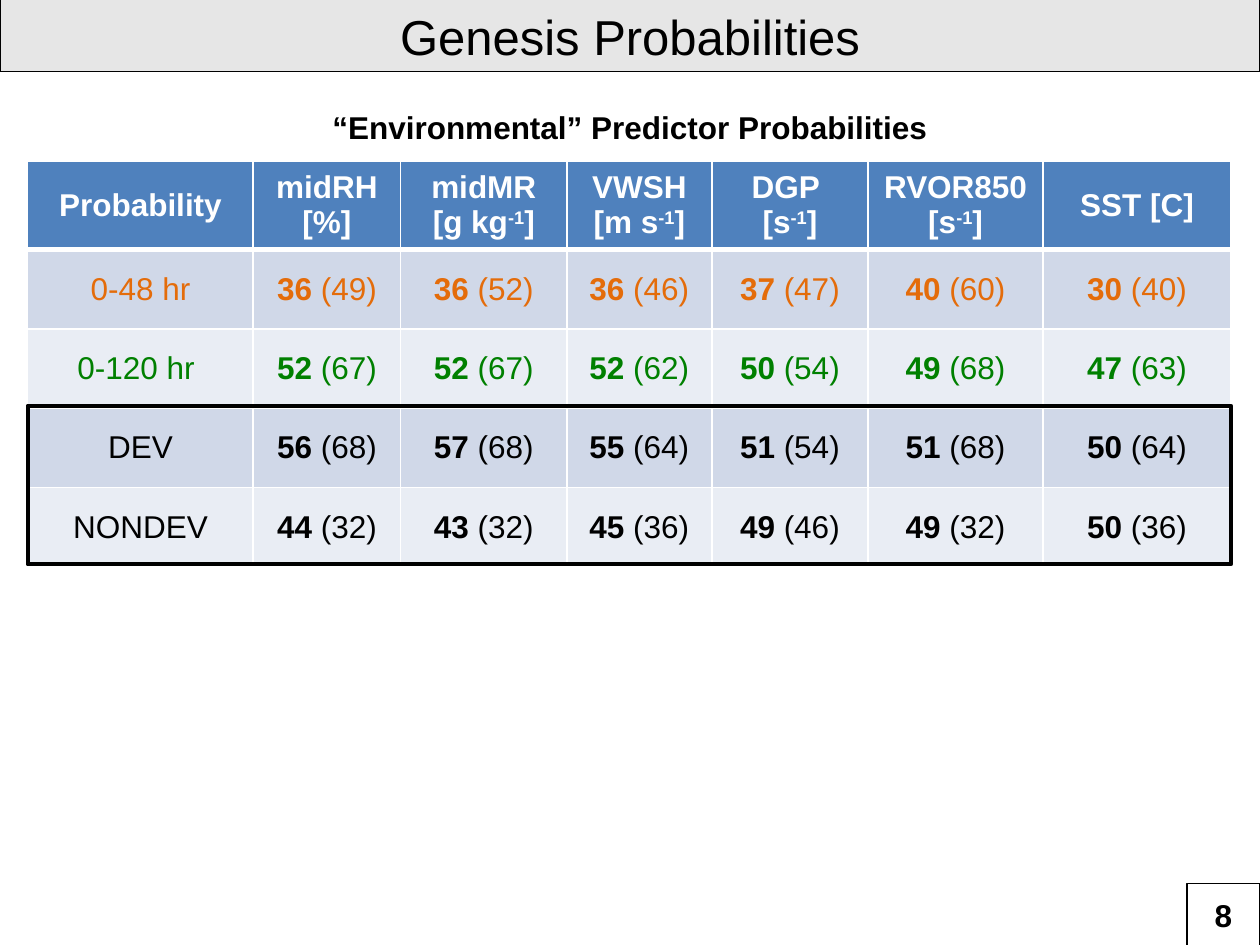
"""Build the Genesis Probabilities slide with its predictor table."""
from lxml import etree
from pptx import Presentation, util as u
from pptx.dml.color import RGBColor
from pptx.enum import shapes, text
from pptx.oxml.ns import qn

TITLE = "Genesis Probabilities"
SUBTITLE = "“Environmental” Predictor Probabilities"
PAGE = "8"
HEADERS = ["Probability", "midRH [%]", "midMR [g kg^-1^]", "VWSH [m s^-1^]",
           "DGP \n[s^-1^]", "RVOR850 [s^-1^]", "SST [C]"]
ROWS = [
    ("0-48 hr", "orange", [(36, 49), (36, 52), (36, 46), (37, 47), (40, 60), (30, 40)]),
    ("0-120 hr ", "green", [(52, 67), (52, 67), (52, 62), (50, 54), (49, 68), (47, 63)]),
    ("DEV", "black", [(56, 68), (57, 68), (55, 64), (51, 54), (51, 68), (50, 64)]),
    ("NONDEV", "black", [(44, 32), (43, 32), (45, 36), (49, 46), (49, 32), (50, 36)]),
]
COLORS = {"black": "000000", "white": "FFFFFF", "gray": "BFBFBF", "header": "4F81BD",
          "band_dark": "D0D8E8", "band_light": "E9EDF4", "orange": "E46C0A", "green": "008000"}
FONT = "Arial"
COLUMN_WIDTHS = [1.79, 1.17, 1.32, 1.15, 1.24, 1.39, 1.49]
ROW_HEIGHT = 0.63
TABLE_BOX = (0.22, 1.28, 9.55, 3.2)
OUTLINED_ROWS = 2


def rgb(name):
    return RGBColor.from_string(COLORS[name])


def add_run(paragraph, wording, size=18, color="black", bold=False, raised=False):
    run = paragraph.add_run()
    run.text = wording
    run.font.size, run.font.name, run.font.bold = u.Pt(size), FONT, bold
    run.font.color.rgb = rgb(color)
    if raised:
        run._r.get_or_add_rPr().set("baseline", "30000")


def add_label(slide, box, wording, size=18, bold=True):
    label = slide.shapes.add_textbox(*map(u.Inches, box))
    label.text_frame.word_wrap = True
    label.text_frame.auto_size = text.MSO_AUTO_SIZE.SHAPE_TO_FIT_TEXT
    paragraph = label.text_frame.paragraphs[0]
    paragraph.alignment = text.PP_ALIGN.CENTER
    add_run(paragraph, wording, size, bold=bold)


def add_frame(slide, box, line_width, fill=None, opacity=100):
    frame = slide.shapes.add_shape(shapes.MSO_SHAPE.RECTANGLE, *map(u.Inches, box))
    frame.shadow.inherit = False
    frame.line.color.rgb, frame.line.width = rgb("black"), u.Pt(line_width)
    if fill is None:
        frame.fill.background()
        return
    frame.fill.solid()
    frame.fill.fore_color.rgb = rgb(fill)
    fill_color = frame._element.spPr.find(qn("a:solidFill"))[0]
    etree.SubElement(fill_color, qn("a:alpha"), val=str(opacity * 1000))


def style_cell(cell, fill, top=1, bottom=1):
    properties = cell._tc.get_or_add_tcPr()
    for side, width in (("L", 1), ("R", 1), ("T", top), ("B", bottom)):
        border = etree.SubElement(properties, qn(f"a:ln{side}"), w=str(u.Pt(width)))
        border_fill = etree.SubElement(border, qn("a:solidFill"))
        etree.SubElement(border_fill, qn("a:srgbClr"), val=COLORS["white"])
    cell.fill.solid()
    cell.fill.fore_color.rgb = rgb(fill)
    cell.vertical_anchor = text.MSO_ANCHOR.MIDDLE


def add_probabilities(slide):
    table = slide.shapes.add_table(len(ROWS) + 1, len(HEADERS),
                                   *map(u.Inches, TABLE_BOX)).table
    for column, width in zip(table.columns, COLUMN_WIDTHS):
        column.width = u.Inches(width)
    for row in table.rows:
        row.height = u.Inches(ROW_HEIGHT)

    for index, header in enumerate(HEADERS):
        cell = table.cell(0, index)
        style_cell(cell, "header", bottom=3)
        for number, line in enumerate(header.split("\n")):
            frame = cell.text_frame
            paragraph = frame.add_paragraph() if number else frame.paragraphs[0]
            paragraph.alignment = text.PP_ALIGN.CENTER
            for part, wording in enumerate(line.split("^")):
                add_run(paragraph, wording, color="white", bold=True, raised=part % 2 == 1)

    for row, (period, color, pairs) in enumerate(ROWS, 1):
        entries = [[(period, False)]]
        entries += [[(str(first), True), (f" ({second})", False)] for first, second in pairs]
        for index, entry in enumerate(entries):
            cell = table.cell(row, index)
            style_cell(cell, "band_dark" if row % 2 else "band_light", top=3 if row == 1 else 1)
            paragraph = cell.text_frame.paragraphs[0]
            paragraph.alignment = text.PP_ALIGN.CENTER
            for wording, bold in entry:
                add_run(paragraph, wording, color=color, bold=bold)


def main():
    deck = Presentation()
    deck.slide_width, deck.slide_height = u.Inches(10), u.Inches(7.5)
    slide = deck.slides.add_slide(deck.slide_layouts[6])

    add_frame(slide, (0, -0.02, 10, 0.59), 0.75, "gray", 39)
    add_label(slide, (0, 0, 10, 0.57), TITLE, 28, bold=False)
    add_probabilities(slide)
    add_label(slide, (0, 0.81, 10, 0.41), SUBTITLE)
    add_frame(slide, (9.42, 7.01, 0.58, 0.5), 0.75)
    add_label(slide, (9.42, 7.06, 0.58, 0.4), PAGE)

    left, top, width, height = TABLE_BOX
    outline_height = OUTLINED_ROWS * ROW_HEIGHT
    add_frame(slide, (left, top + height - outline_height, width, outline_height), 2.25)
    deck.save("out.pptx")


if __name__ == "__main__":
    main()
